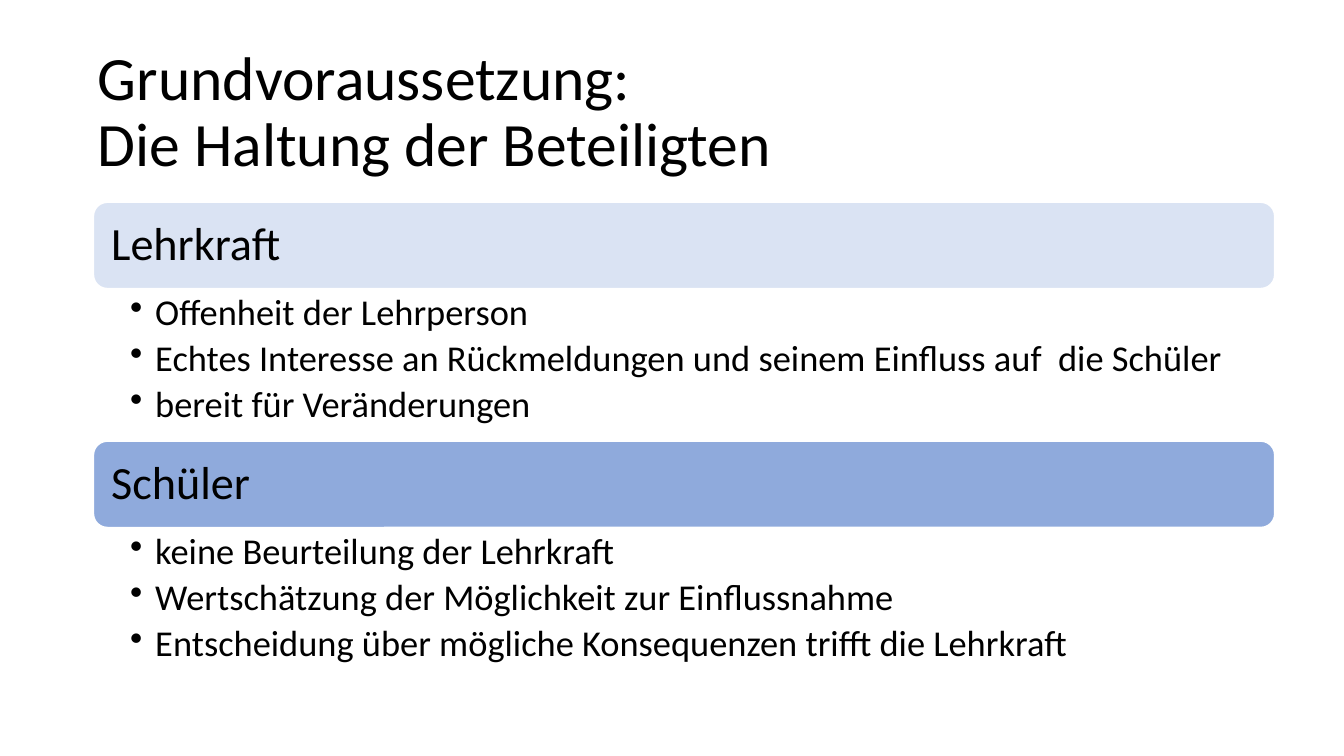
import pptx
import pptx.util
import pptx.dml.color
import pptx.enum.shapes
import pptx.enum.text
import pptx.oxml.ns
import lxml.etree

Inches = pptx.util.Inches
Pt = pptx.util.Pt
RGBColor = pptx.dml.color.RGBColor
Anchor = pptx.enum.text.MSO_ANCHOR

BLACK = RGBColor(0x00, 0x00, 0x00)
WHITE = RGBColor(0xFF, 0xFF, 0xFF)
PALE_BLUE = RGBColor(0xDA, 0xE3, 0xF3)
MID_BLUE = RGBColor(0x8F, 0xAA, 0xDC)

LEFT, WIDTH = 0.92, 11.73
FIRST_TOP, SECTION_PITCH = 2.0, 2.37
BAND_HEIGHT, POINTS_HEIGHT = 0.87, 1.49

SECTIONS = [
    ("Lehrkraft", PALE_BLUE, [
        "Offenheit der Lehrperson",
        "Echtes Interesse an Rückmeldungen und seinem Einfluss auf  die Schüler",
        "bereit für Veränderungen",
    ]),
    ("Schüler", MID_BLUE, [
        "keine Beurteilung der Lehrkraft",
        "Wertschätzung der Möglichkeit zur Einflussnahme",
        "Entscheidung über mögliche Konsequenzen trifft die Lehrkraft",
    ]),
]


def add_bullet(paragraph):
    """Give a paragraph a round bullet with a hanging indent."""
    properties = paragraph._p.get_or_add_pPr()
    properties.set("marL", str(Inches(0.25)))
    properties.set("indent", str(-Inches(0.25)))
    bullet = lxml.etree.SubElement(properties, pptx.oxml.ns.qn("a:buChar"))
    bullet.set("char", "•")


def write_text(frame, lines, size, insets, anchor=Anchor.MIDDLE, space_after=0, bullets=False):
    """Fill a text frame with one formatted paragraph for each line."""
    frame.word_wrap = True
    frame.vertical_anchor = anchor
    frame.margin_left, frame.margin_top, frame.margin_right, frame.margin_bottom = map(Inches, insets)
    for index, line in enumerate(lines):
        paragraph = frame.add_paragraph() if index else frame.paragraphs[0]
        paragraph.text = line
        paragraph.alignment = pptx.enum.text.PP_ALIGN.LEFT
        paragraph.line_spacing = 0.9
        paragraph.space_after = Pt(space_after)
        if bullets:
            add_bullet(paragraph)
        for run in paragraph.runs:
            run.font.name = "Calibri"
            run.font.size = Pt(size)
            run.font.color.rgb = BLACK


def add_title(slide, title):
    """Add the slide title."""
    box = slide.shapes.add_textbox(Inches(LEFT), Inches(0.4), Inches(11.5), Inches(1.45))
    write_text(box.text_frame, [title], 44, [0.05] * 4)


def add_band(slide, top, heading, fill):
    """Add the rounded heading band of a section."""
    band = slide.shapes.add_shape(
        pptx.enum.shapes.MSO_SHAPE.ROUNDED_RECTANGLE,
        Inches(LEFT), Inches(top), Inches(WIDTH), Inches(BAND_HEIGHT))
    band.shadow.inherit = False
    band.fill.solid()
    band.fill.fore_color.rgb = fill
    band.line.color.rgb = WHITE
    band.line.width = Pt(2)
    write_text(band.text_frame, [heading], 33, [0.14] * 4)


def add_points(slide, top, points):
    """Add the bulleted points below a band."""
    box = slide.shapes.add_textbox(Inches(LEFT), Inches(top), Inches(WIDTH), Inches(POINTS_HEIGHT))
    write_text(box.text_frame, points, 26, [0.37, 0.05, 0.26, 0.05],
               anchor=Anchor.TOP, space_after=4.7, bullets=True)


def main():
    """Build and save the slide."""
    presentation = pptx.Presentation()
    presentation.slide_width = Inches(13.33)
    presentation.slide_height = Inches(7.5)
    slide = presentation.slides.add_slide(presentation.slide_layouts[6])
    add_title(slide, "Grundvoraussetzung: \vDie Haltung der Beteiligten")
    for index, (heading, fill, points) in enumerate(SECTIONS):
        top = FIRST_TOP + index * SECTION_PITCH
        add_band(slide, top, heading, fill)
        add_points(slide, top + BAND_HEIGHT, points)
    presentation.save("out.pptx")


if __name__ == "__main__":
    main()
